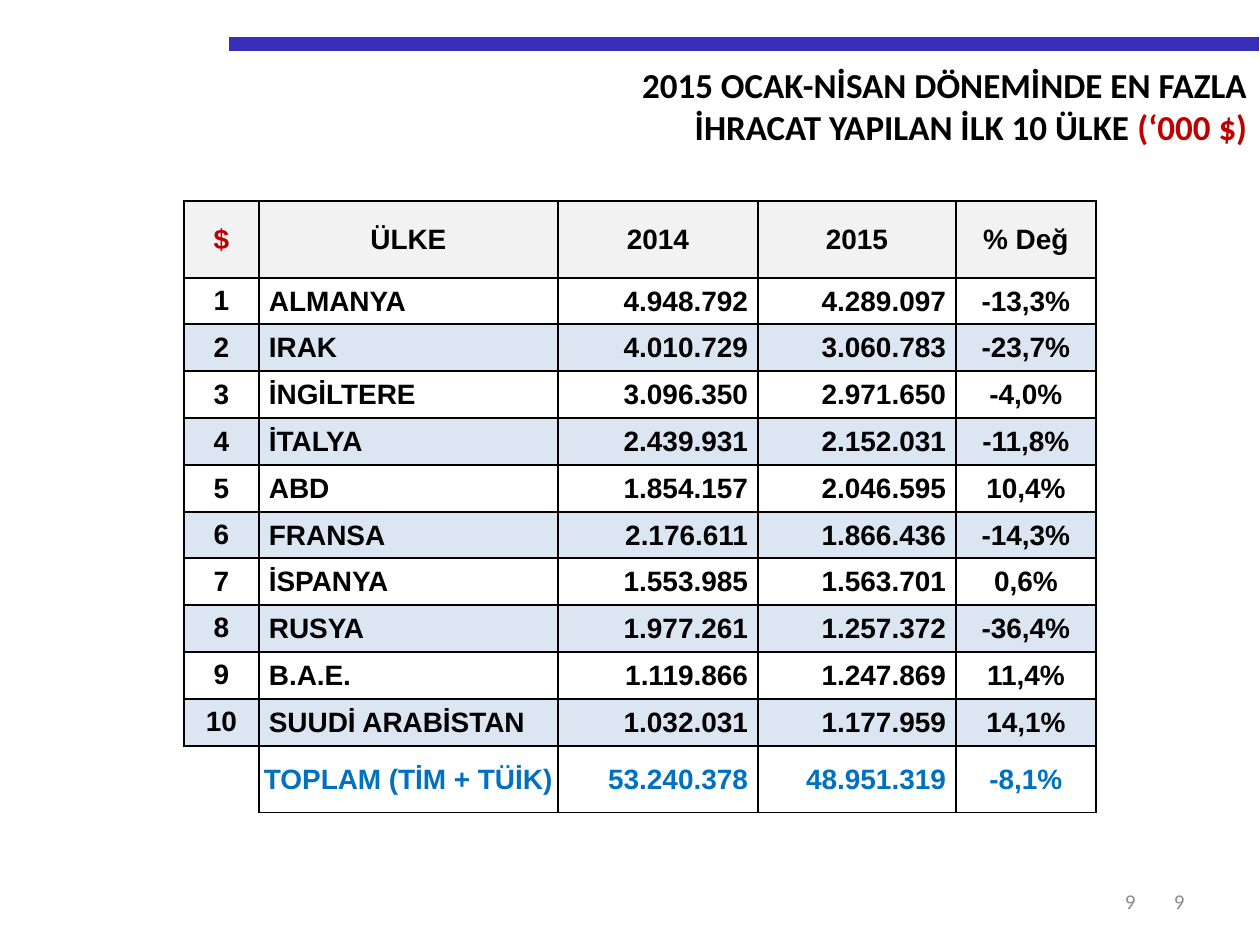
from lxml.etree import SubElement
from pptx import Presentation
from pptx.dml.color import RGBColor
from pptx.enum.shapes import MSO_CONNECTOR
from pptx.enum.text import MSO_ANCHOR, MSO_AUTO_SIZE, PP_ALIGN
from pptx.oxml.ns import qn
from pptx.util import Emu, Pt

PX = 914400 / 126
BLACK, RED, BLUE, GREY = "000000", "C00000", "0070C0", "8C8C8C"
HEADER_FILL, BAND_FILL = "F2F2F2", "DCE6F2"

HEADER = ["$", "ÜLKE", "2014", "2015", "% Değ"]
COUNTRIES = [
    ["1", "ALMANYA", "4.948.792", "4.289.097", "-13,3%"],
    ["2", "IRAK", "4.010.729", "3.060.783", "-23,7%"],
    ["3", "İNGİLTERE", "3.096.350", "2.971.650", "-4,0%"],
    ["4", "İTALYA", "2.439.931", "2.152.031", "-11,8%"],
    ["5", "ABD", "1.854.157", "2.046.595", "10,4%"],
    ["6", "FRANSA", "2.176.611", "1.866.436", "-14,3%"],
    ["7", "İSPANYA", "1.553.985", "1.563.701", "0,6%"],
    ["8", "RUSYA", "1.977.261", "1.257.372", "-36,4%"],
    ["9", "B.A.E.", "1.119.866", "1.247.869", "11,4%"],
    ["10", "SUUDİ ARABİSTAN", "1.032.031", "1.177.959", "14,1%"],
]
TOTAL = ["", "TOPLAM (TİM + TÜİK)", "53.240.378", "48.951.319", "-8,1%"]


def px(*lengths):
    """Turn whole pixels into EMU lengths."""
    return [Emu(round(length * PX)) for length in lengths]


def style_font(font, name, size, color, bold=False):
    font.name = name
    font.size = Pt(size)
    font.bold = bold
    font.color.rgb = RGBColor.from_string(color)


presentation = Presentation()
presentation.slide_width, presentation.slide_height = px(1260, 945)
slide = presentation.slides.add_slide(presentation.slide_layouts[5])

# Bar above the title
bar = slide.shapes.add_connector(MSO_CONNECTOR.STRAIGHT, *px(229, 44, 1259, 44))
bar.line.color.rgb = RGBColor.from_string("382EB8")
bar.line.width = Pt(8.5)
SubElement(bar._element.spPr, qn("a:effectLst"))

# Title
title = slide.shapes.title
title.left, title.top, title.width, title.height = px(134, 57, 1126, 97)
title_frame = title.text_frame
title_frame.text = "2015 OCAK-NİSAN DÖNEMİNDE EN FAZLA\nİHRACAT YAPILAN İLK 10 ÜLKE "
title_frame.word_wrap = True
title_frame.auto_size = MSO_AUTO_SIZE.NONE
title_frame.vertical_anchor = MSO_ANCHOR.TOP
title_frame.paragraphs[1].add_run().text = "(‘000 $)"
for paragraph in title_frame.paragraphs:
    paragraph.alignment = PP_ALIGN.RIGHT
    for run in paragraph.runs:
        style_font(run.font, "Calibri", 20, BLACK, bold=True)
title_frame.paragraphs[1].runs[1].font.color.rgb = RGBColor.from_string(RED)

# Page numbers
for left, width in [(903, 294), (883, 265)]:
    number = slide.shapes.add_textbox(*px(left, 876, width, 50))
    number.text_frame.text = "9"
    number.text_frame.word_wrap = True
    number.text_frame.vertical_anchor = MSO_ANCHOR.MIDDLE
    paragraph = number.text_frame.paragraphs[0]
    paragraph.alignment = PP_ALIGN.RIGHT
    style_font(paragraph.runs[0].font, "Calibri", 12, GREY)

# Export table
rows = [HEADER, *COUNTRIES, TOTAL]
last = len(rows) - 1
row_edges = [201, *(278 + 468 * step // 10 for step in range(11)), 813]
column_edges = [184, 259, 558, 758, 956, 1096]
frame = slide.shapes.add_table(len(rows), len(HEADER), *px(184, 201, 912, 612))
table = frame.table
table.first_row = table.horz_banding = False
for column, start, end in zip(table.columns, column_edges, column_edges[1:]):
    column.width, = px(end - start)
for row, start, end in zip(table.rows, row_edges, row_edges[1:]):
    row.height, = px(end - start)

alignments = [PP_ALIGN.CENTER, PP_ALIGN.LEFT, PP_ALIGN.RIGHT, PP_ALIGN.RIGHT, PP_ALIGN.CENTER]
side_margins = [(12, 12), (10, 1), (1, 10), (1, 10), (1, 1)]

for row_index, values in enumerate(rows):
    for column_index, value in enumerate(values):
        cell = table.cell(row_index, column_index)
        in_header = row_index == 0
        in_total = row_index == last

        properties = cell._tc.get_or_add_tcPr()
        for side in ("lnL", "lnR", "lnT", "lnB"):
            border = SubElement(properties, qn(f"a:{side}"), w=str(Pt(1)))
            if in_total and column_index == 0 and side in ("lnL", "lnB"):
                SubElement(border, qn("a:noFill"))
            else:
                fill = SubElement(border, qn("a:solidFill"))
                SubElement(fill, qn("a:srgbClr"), val=BLACK)

        if in_header or (row_index % 2 == 0 and not in_total):
            cell.fill.solid()
            cell.fill.fore_color.rgb = RGBColor.from_string(HEADER_FILL if in_header else BAND_FILL)
        else:
            cell.fill.background()

        cell.vertical_anchor = MSO_ANCHOR.MIDDLE
        left, right = (12, 12) if in_header else side_margins[column_index]
        if in_total and column_index == 1:
            left = 5
        top, bottom = (6, 6) if in_header or column_index == 0 else (1, 0)
        cell.margin_left, cell.margin_right, cell.margin_top, cell.margin_bottom = px(left, right, top, bottom)

        cell.text = value
        paragraph = cell.text_frame.paragraphs[0]
        paragraph.alignment = PP_ALIGN.CENTER if in_header else alignments[column_index]
        color = BLUE if in_total else RED if value == "$" else BLACK
        for run in paragraph.runs:
            style_font(run.font, "Arial", 16, color, bold=True)

presentation.save("out.pptx")
